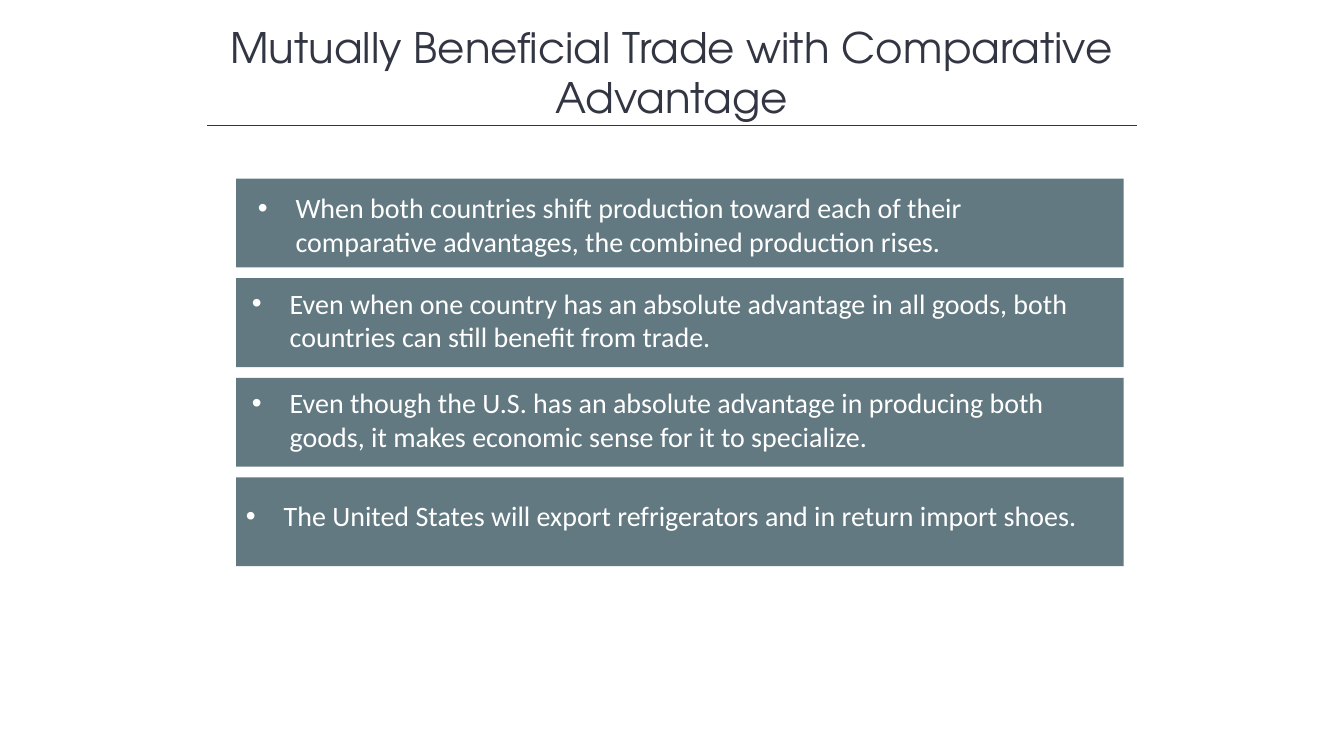
"""Build a slide on mutually beneficial trade with comparative advantage."""
import pptx
import pptx.dml.color
import pptx.enum.shapes
import pptx.enum.text
import pptx.oxml
import pptx.oxml.ns
import pptx.util
import lxml.etree

Cm = pptx.util.Cm
Pt = pptx.util.Pt
Color = pptx.dml.color.RGBColor.from_string

TITLE = "Mutually Beneficial Trade with Comparative Advantage"
POINTS = [
    {"text": "When both countries shift production toward each of their comparative "
             "advantages, the combined production rises.",
     "shift": (0.3, 0.18), "height": 1.96},
    {"text": "Even when one country has an absolute advantage in all goods, both "
             "countries can still benefit from trade.",
     "shift": (0.15, 0.08), "height": 1.96},
    {"text": "Even though the U.S. has an absolute advantage in producing both goods, "
             "it makes economic sense for it to specialize.",
     "shift": (0.15, 0.08), "height": 1.96},
    {"text": "The United States will export refrigerators and in return import shoes.",
     "shift": (0, 0.41), "height": 1.12},
]
THEME = {
    "ink": "323542",
    "bar": "627981",
    "title": {"name": "TeX Gyre Adventor", "size": Pt(30), "color": "323542"},
    "body": {"name": "Calibri", "size": Pt(20), "color": "FFFFFF"},
}
FRAME = {"word_wrap": True, "vertical_anchor": pptx.enum.text.MSO_ANCHOR.TOP}
BAR_LEFT, BAR_TOP, BAR_WIDTH, BAR_HEIGHT = 5.95, 4.5, 22.37, 2.24
BAR_STEP = 2.51
TEXT_WIDTH = 21.7
INDENT = Cm(0.95)


def set_values(target, values):
    for name, value in values.items():
        setattr(target, name, value)


def write(box, text, style, align):
    set_values(box.text_frame, FRAME)
    para = box.text_frame.paragraphs[0]
    para.alignment = align
    span = para.add_run()
    span.text = text
    set_values(span.font, {"name": style["name"], "size": style["size"]})
    span.font.color.rgb = Color(style["color"])
    return para


def add_bullet(para):
    properties = para._p.get_or_add_pPr()
    properties.set("marL", str(INDENT))
    properties.set("indent", str(-INDENT))
    for tag, name, value in (("a:buFont", "typeface", "Arial"), ("a:buChar", "char", "•")):
        mark = lxml.etree.SubElement(properties, pptx.oxml.ns.qn(tag))
        mark.set(name, value)


def add_bar(group, left, top, width, height):
    bar = group.shapes.add_shape(pptx.enum.shapes.MSO_SHAPE.RECTANGLE,
                                 Cm(left), Cm(top), Cm(width), Cm(height))
    bar.shadow.inherit = False
    bar.fill.solid()
    bar.fill.fore_color.rgb = Color(THEME["bar"])
    bar.line.fill.background()
    return bar


def add_title(page):
    box = page.shapes.add_textbox(Cm(4.23), Cm(0.41), Cm(25.4), Cm(2.82))
    write(box, TITLE, THEME["title"], pptx.enum.text.PP_ALIGN.CENTER)
    rule = page.shapes.add_connector(pptx.enum.shapes.MSO_CONNECTOR.STRAIGHT,
                                     Cm(5.22), Cm(3.16), Cm(28.65), Cm(3.16))
    rule.line.color.rgb = Color(THEME["ink"])
    rule.line.width = Pt(1)
    lxml.etree.SubElement(rule._element.spPr, pptx.oxml.ns.qn("a:effectLst"))


def add_points(page):
    for index, point in enumerate(POINTS):
        top = BAR_TOP + index * BAR_STEP
        across, down = point["shift"]
        group = page.shapes.add_group_shape()
        add_bar(group, BAR_LEFT, top, BAR_WIDTH, BAR_HEIGHT)
        box = add_bar(group, BAR_LEFT + across, top + down, TEXT_WIDTH, point["height"])
        add_bullet(write(box, point["text"], THEME["body"], pptx.enum.text.PP_ALIGN.LEFT))


def main():
    deck = pptx.Presentation()
    set_values(deck, {"slide_width": Cm(33.87), "slide_height": Cm(19.05)})
    page = deck.slides.add_slide(deck.slide_layouts[6])
    add_title(page)
    add_points(page)
    deck.save("out.pptx")


if __name__ == "__main__":
    main()
